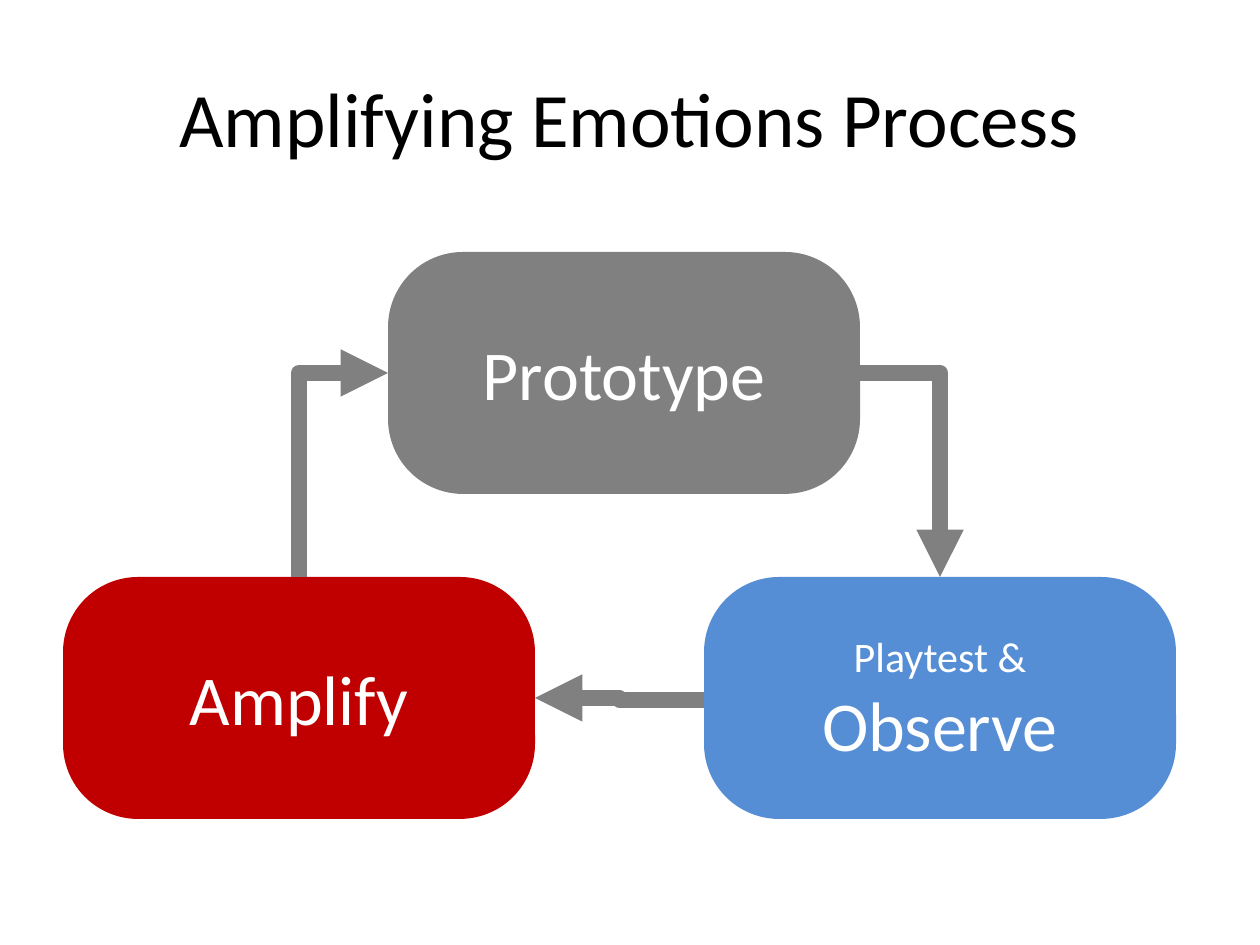
from pptx import Presentation
from pptx import util as u
from pptx.dml.color import RGBColor
from pptx.enum import shapes, text
from pptx.oxml.ns import qn
from lxml import etree

SCALE = 914400 / 126
HUES = {"gray": "808080", "blue": "558ED5", "red": "C00000",
        "white": "FFFFFF", "black": "000000"}
BOX = (472, 242)


def px(n):
    return u.Emu(round(n * SCALE))


def hue(name):
    return RGBColor.from_string(HUES[name])


def place(shape, x, y, w, h):
    spot = {"left": x, "top": y, "width": w, "height": h}
    for key, val in spot.items():
        setattr(shape, key, px(val))


def write(shape, runs, color):
    """Fill the shape with one centred paragraph of (words, points) runs."""
    frame = shape.text_frame
    frame.word_wrap = True
    frame.vertical_anchor = text.MSO_ANCHOR.MIDDLE
    para = frame.paragraphs[0]
    para.alignment = text.PP_ALIGN.CENTER
    for words, size in runs:
        run = para.add_run()
        run.text = words
        look = {"name": "Calibri", "size": u.Pt(size)}
        for key, val in look.items():
            setattr(run.font, key, val)
        run.font.color.rgb = hue(color)


def add_title(slide, words):
    title = slide.shapes.title
    place(title, 63, 38, 1134, 157)
    write(title, [(words, 44)], "black")


def add_step(slide, x, y, fill, runs):
    kind = shapes.MSO_SHAPE.ROUNDED_RECTANGLE
    step = slide.shapes.add_shape(kind, *map(px, (x, y, *BOX)))
    step.adjustments[0] = 0.31
    step.shadow.inherit = False
    step.fill.solid()
    step.fill.fore_color.rgb = hue(fill)
    step.line.fill.background()
    write(step, runs, "white")


def add_arrow(slide, start, end, corner=False, rise=False):
    """Draw an elbow arrow: corner gives one bend, rise makes it go up first."""
    kind = shapes.MSO_CONNECTOR.ELBOW
    arrow = slide.shapes.add_connector(kind, *map(px, start + end))
    props = arrow._element.spPr
    if corner:
        props.find(qn("a:prstGeom")).set("prst", "bentConnector2")
    if rise:
        wide, high = abs(end[0] - start[0]), abs(end[1] - start[1])
        midx, midy = (start[0] + end[0]) / 2, (start[1] + end[1]) / 2
        place(arrow, midx - high / 2, midy - wide / 2, high, wide)
        turn = {"rot": "5400000", "flipH": "1", "flipV": "1"}
        for key, val in turn.items():
            props.find(qn("a:xfrm")).set(key, val)
    arrow.line.width = u.Pt(9)
    arrow.line.color.rgb = hue("gray")
    line = props.find(qn("a:ln"))
    etree.SubElement(line, qn("a:tailEnd"), type="triangle")
    etree.SubElement(props, qn("a:effectLst"))


def main():
    deck = Presentation()
    deck.slide_width, deck.slide_height = px(1260), px(945)
    slide = deck.slides.add_slide(deck.slide_layouts[5])
    add_title(slide, "Amplifying Emotions Process")
    add_step(slide, 388, 252, "gray", [("Prototype", 40)])
    add_step(slide, 704, 577, "blue", [("Playtest & ", 24), ("Observe", 40)])
    add_step(slide, 63, 577, "red", [("Amplify", 40)])
    add_arrow(slide, (860, 373), (940, 577), corner=True)
    add_arrow(slide, (704, 700), (535, 698))
    add_arrow(slide, (299, 577), (388, 373), corner=True, rise=True)
    deck.save("out.pptx")


if __name__ == "__main__":
    main()
